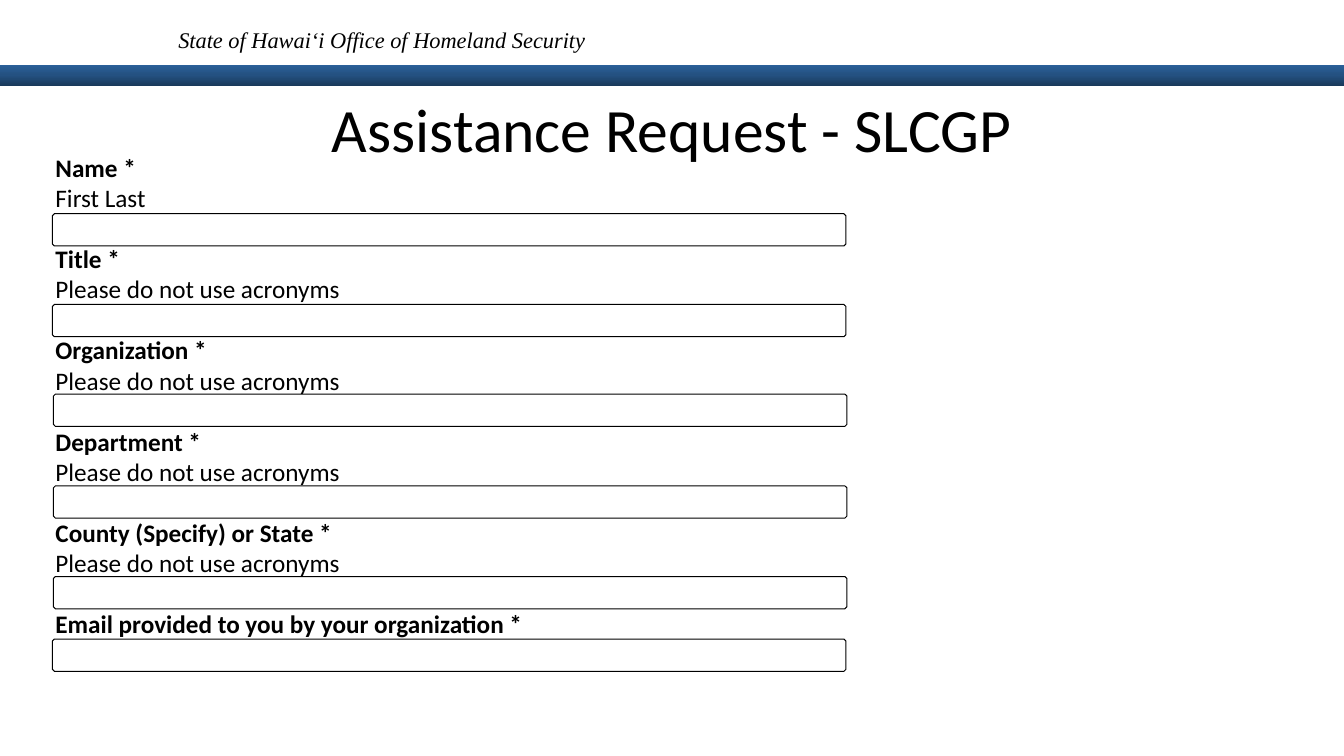
import copy

import pptx
import pptx.dml.color
import pptx.enum.shapes
import pptx.enum.text
import pptx.oxml
import pptx.util

Inches = pptx.util.Inches
Pt = pptx.util.Pt
ALIGN = pptx.enum.text.PP_ALIGN
ANCHOR = pptx.enum.text.MSO_ANCHOR

ACRONYMS = "Please do not use acronyms"
FIELDS = [
    ("Name *", "First Last", 0.52, 2.12),
    ("Title *", ACRONYMS, 0.52, 3.02),
    ("Organization *", ACRONYMS, 0.53, 3.91),
    ("Department *", ACRONYMS, 0.53, 4.82),
    ("County (Specify) or State *", ACRONYMS, 0.53, 5.72),
    ("Email provided to you by your organization *", None, 0.52, 6.34),
]


def color(value):
    return pptx.dml.color.RGBColor.from_string(value)


def apply(target, values):
    for name, value in values.items():
        setattr(target, name, value)


class FormSlide:
    """Holds the form style and the slide being built."""

    ink = "000000"
    paper = "FFFFFF"
    band_stops = ["19395B", "245181", "2B6099"]
    field_width, field_height, corner = 7.87, 0.32, 0.02

    def __init__(self, presentation):
        self.slide = presentation.slides.add_slide(presentation.slide_layouts[1])

    def place(self, shape, left, top, width, height, anchor=ANCHOR.TOP):
        apply(shape, {"left": Inches(left), "top": Inches(top),
                      "width": Inches(width), "height": Inches(height)})
        apply(shape.text_frame, {"word_wrap": True, "vertical_anchor": anchor,
                                 "auto_size": pptx.enum.text.MSO_AUTO_SIZE.NONE})

    def fill_paragraph(self, paragraph, text, size, font="Calibri", bold=False,
                       italic=False, align=ALIGN.LEFT, before=0):
        paragraph.text = text
        apply(paragraph, {"alignment": align, "space_before": Pt(before),
                          "space_after": Pt(0), "line_spacing": 1.0})
        apply(paragraph.font, {"name": font, "size": Pt(size),
                               "bold": bold, "italic": italic})
        paragraph.font.color.rgb = color(self.ink)

    def band(self, left, top, width, height):
        shape = self.slide.shapes.add_shape(
            pptx.enum.shapes.MSO_SHAPE.RECTANGLE,
            Inches(left), Inches(top), Inches(width), Inches(height))
        shape.shadow.inherit = False
        shape.line.fill.background()
        shape.fill.gradient()
        shape.fill.gradient_angle = 90
        first = shape._element.xpath(".//a:gs")[0]
        first.addnext(copy.deepcopy(first))
        for index, stop in enumerate(shape.fill.gradient_stops):
            stop.color.rgb = color(self.band_stops[index])
            stop.position = index / 2

    def agency(self, text, *bounds):
        shape = self.slide.shapes.add_textbox(0, 0, 0, 0)
        self.place(shape, *bounds)
        self.fill_paragraph(shape.text_frame.paragraphs[0], text, 16,
                            font="Times New Roman", italic=True)

    def title(self, text, *bounds):
        shape = self.slide.shapes.title
        self.place(shape, *bounds, anchor=ANCHOR.MIDDLE)
        self.fill_paragraph(shape.text_frame.paragraphs[0], text, 44, align=ALIGN.CENTER)

    def labels(self, fields, *bounds):
        shape = self.slide.placeholders[1]
        self.place(shape, *bounds)
        frame = shape.text_frame
        lines = [(text, bold) for label, hint, left, top in fields
                 for text, bold in ((label, True), (hint, False)) if text]
        for index, (text, bold) in enumerate(lines):
            paragraph = frame.add_paragraph() if index else frame.paragraphs[0]
            properties = paragraph._p.get_or_add_pPr()
            properties.set("marL", "0")
            properties.set("indent", "0")
            properties.append(pptx.oxml.parse_xml(
                '<a:buNone xmlns:a="http://schemas.openxmlformats.org/drawingml/2006/main"/>'))
            self.fill_paragraph(paragraph, text, 18, bold=bold,
                                before=22 if bold and index else 0)

    def field(self, left, top):
        right, bottom, cut = left + self.field_width, top + self.field_height, self.corner
        points = [(left + cut, top), (right - cut, top), (right, top + cut),
                  (right, bottom - cut), (right - cut, bottom),
                  (left + cut, bottom), (left, bottom - cut), (left, top + cut)]
        points = [(Inches(x), Inches(y)) for x, y in points]
        builder = self.slide.shapes.build_freeform(*points[0])
        builder.add_line_segments(points[1:], close=True)
        shape = builder.convert_to_shape()
        shape.shadow.inherit = False
        shape.fill.solid()
        shape.fill.fore_color.rgb = color(self.paper)
        shape.line.color.rgb = color(self.ink)
        shape.line.width = Pt(0.75)


def main():
    presentation = pptx.Presentation()
    apply(presentation, {"slide_width": Inches(13.33), "slide_height": Inches(7.5)})
    form = FormSlide(presentation)
    form.band(0, 0.64, 13.33, 0.21)
    form.agency("State of Hawai‘i Office of Homeland Security", 1.67, 0.21, 7.96, 0.37)
    form.title("Assistance Request - SLCGP", 0, 0.85, 13.33, 0.84)
    form.labels(FIELDS, 0.45, 1.46, 12.14, 5.55)
    for label, hint, left, top in FIELDS:
        form.field(left, top)
    presentation.save("out.pptx")


if __name__ == "__main__":
    main()
